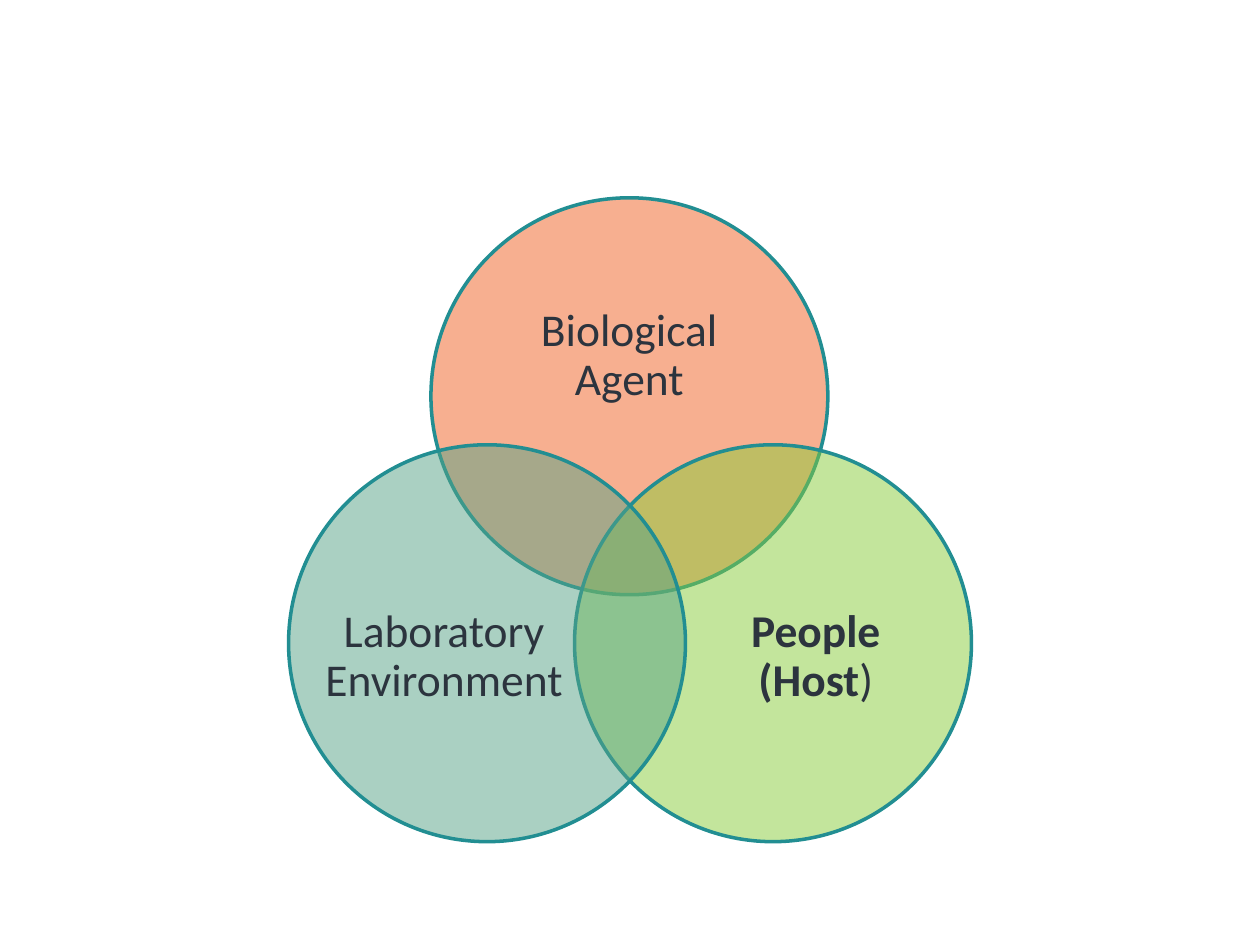
import pptx
import pptx.util
import pptx.dml.color
import pptx.enum.shapes
import pptx.enum.text
import pptx.oxml.ns
import lxml.etree

Inches = pptx.util.Inches
COLORS = {
    "agent": "F16122",
    "people": "88CC3A",
    "lab": "57A286",
    "outline": "228E92",
    "text": "2C343E",
}
DIAMETER = 3.15


def rgb(name):
    return pptx.dml.color.RGBColor.from_string(COLORS[name])


prs = pptx.Presentation()
prs.slide_width = Inches(10)
prs.slide_height = Inches(7.5)
s = prs.slides.add_slide(prs.slide_layouts[6])

circles = [
    ("agent", (3.42, 1.57), (3.84, 2.12, 2.31, 1.42), [("Biological Agent", False)]),
    ("people", (4.56, 3.53), (5.53, 4.35, 1.89, 1.73), [("People (Host", True), (")", False)]),
    ("lab", (2.29, 3.53), (2.58, 4.35, 1.89, 1.73), [("Laboratory Environment", False)]),
]

for color, (left, top), label_box, runs in circles:
    sp = s.shapes.add_shape(
        pptx.enum.shapes.MSO_SHAPE.OVAL,
        Inches(left), Inches(top), Inches(DIAMETER), Inches(DIAMETER),
    )
    sp.shadow.inherit = False
    sp.fill.solid()
    sp.fill.fore_color.rgb = rgb(color)
    clr = sp._element.spPr.find(".//" + pptx.oxml.ns.qn("a:srgbClr"))
    lxml.etree.SubElement(clr, pptx.oxml.ns.qn("a:alpha"), val="50000")
    sp.line.color.rgb = rgb("outline")
    sp.line.width = pptx.util.Pt(2)

    label = s.shapes.add_textbox(*[Inches(v) for v in label_box])
    tf = label.text_frame
    tf.word_wrap = True
    tf.vertical_anchor = pptx.enum.text.MSO_ANCHOR.MIDDLE
    tf.margin_left = tf.margin_right = tf.margin_top = tf.margin_bottom = 0
    p = tf.paragraphs[0]
    p.alignment = pptx.enum.text.PP_ALIGN.CENTER
    p.line_spacing = 0.9
    for text, bold in runs:
        r = p.add_run()
        r.text = text
        r.font.name = "Calibri"
        r.font.size = pptx.util.Pt(26)
        r.font.bold = bold
        r.font.color.rgb = rgb("text")

prs.save("out.pptx")
